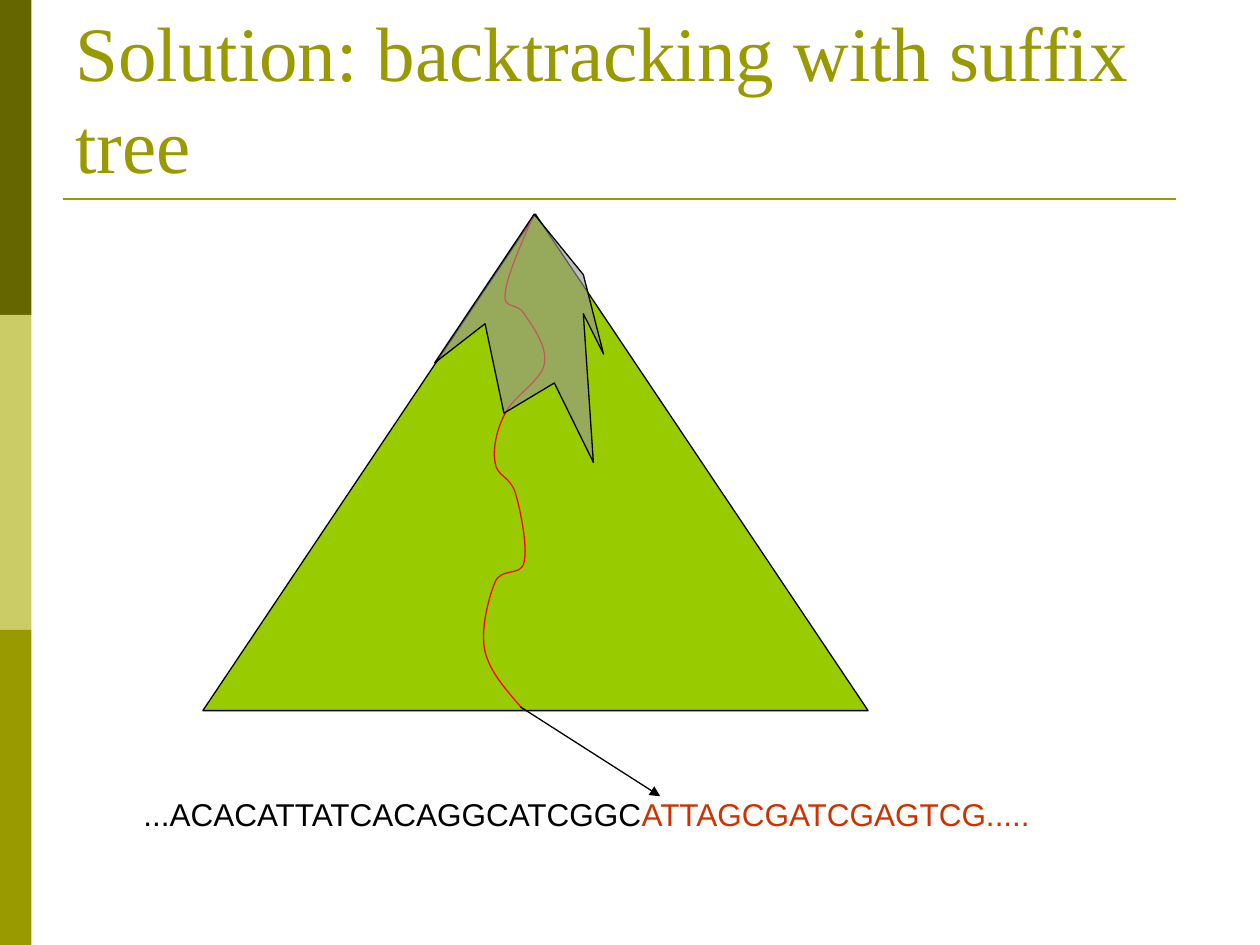
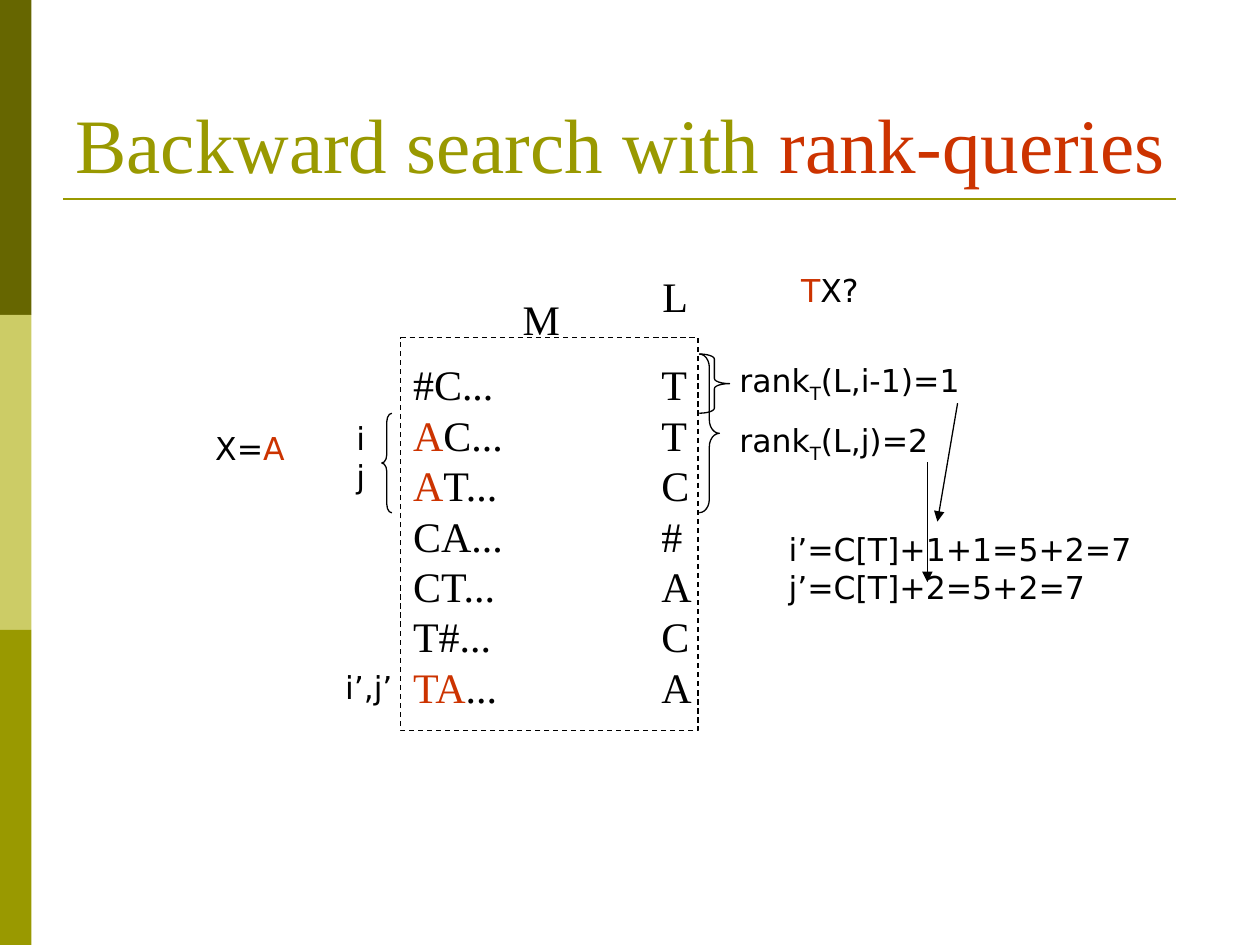
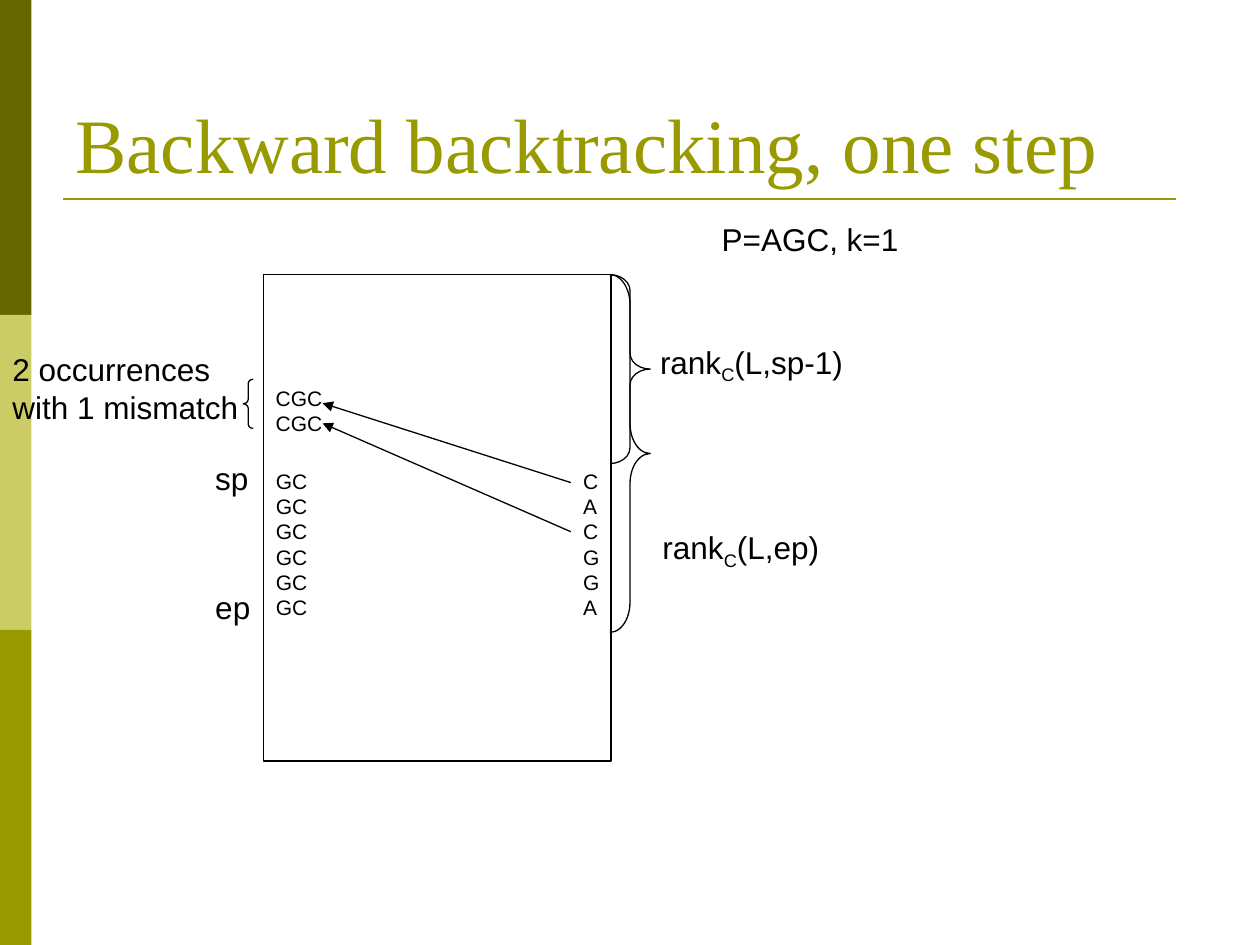
from dataclasses import dataclass

from lxml import etree
from pptx import Presentation
from pptx.dml.color import RGBColor
from pptx.enum.dml import MSO_LINE
from pptx.enum.shapes import MSO_CONNECTOR, MSO_SHAPE
from pptx.enum.text import MSO_ANCHOR, MSO_AUTO_SIZE, PP_ALIGN
from pptx.oxml.ns import qn
from pptx.util import Inches, Pt

RECTANGLE = MSO_SHAPE.RECTANGLE
TRIANGLE = MSO_SHAPE.ISOSCELES_TRIANGLE
LEFT_BRACE = MSO_SHAPE.LEFT_BRACE
RIGHT_BRACE = MSO_SHAPE.RIGHT_BRACE
STRAIGHT = MSO_CONNECTOR.STRAIGHT
DASH = MSO_LINE.DASH
BOTTOM = MSO_ANCHOR.BOTTOM
LEFT = PP_ALIGN.LEFT
NO_FIT = MSO_AUTO_SIZE.NONE
GROW = MSO_AUTO_SIZE.SHAPE_TO_FIT_TEXT
TITLE_ONLY = 5


@dataclass(frozen=True)
class Theme:
    olive: str = "999900"
    bands: tuple = ("666600", "CCCC66", "999900")
    accent: str = "CC3300"
    ink: str = "000000"
    tree: str = "99CC00"
    trail: str = "FF0000"
    cap: str = "969696"
    serif: str = "Times New Roman"
    sans: str = "Arial"
    wide: str = "DejaVu Sans"
    title_size: int = 44
    matrix_size: int = 24
    label_size: int = 18
    row_size: int = 12
    thin: float = 0.75
    rule: float = 1.5


@dataclass(frozen=True)
class Box:
    left: float
    top: float
    width: float
    height: float

    def inside(self, left, top, width, height):
        return Box(self.left + left, self.top + top, width, height)

    def point(self, across, down):
        return Inches(self.left + across), Inches(self.top + down)

    def lengths(self):
        return [Inches(value) for value in (self.left, self.top, self.width, self.height)]


THEME = Theme()


def color(code):
    return RGBColor.from_string(code)


def set_attributes(target, values):
    for name, value in values.items():
        setattr(target, name, value)


def paint(shape, fill=None, line=None):
    shape.shadow.inherit = False
    if fill:
        shape.fill.solid()
        shape.fill.fore_color.rgb = color(fill)
    else:
        shape.fill.background()
    if line:
        shape.line.color.rgb = color(line)
        shape.line.width = Pt(THEME.thin)
    else:
        shape.line.fill.background()


def add_preset(slide, kind, box, fill=None, line=None, adjustments=()):
    shape = slide.shapes.add_shape(kind, *box.lengths())
    for index, value in enumerate(adjustments):
        shape.adjustments[index] = value
    paint(shape, fill, line)
    return shape


def add_brace(slide, kind, box, curve):
    return add_preset(slide, kind, box, line=THEME.ink, adjustments=(curve, 0.5))


def add_line(slide, start, end, line=THEME.ink, width=THEME.thin, arrow=True):
    connector = slide.shapes.add_connector(STRAIGHT, *start, *end)
    connector.line.color.rgb = color(line)
    connector.line.width = Pt(width)
    if arrow:
        etree.SubElement(connector.line._get_or_add_ln(), qn("a:tailEnd"), type="triangle")
    etree.SubElement(connector.element.spPr, qn("a:effectLst"))
    return connector


def add_outline(slide, box, points, close):
    start, *rest = [box.point(*point) for point in points]
    builder = slide.shapes.build_freeform(*start, scale=1.0)
    builder.add_line_segments(rest, close=close)
    return builder.convert_to_shape()


def bend(shape):
    segments = list(shape.element.iter(qn("a:lnTo")))
    for index in range(0, len(segments), 3):
        first = segments[index]
        curve = etree.Element(qn("a:cubicBezTo"))
        first.addprevious(curve)
        for segment in segments[index:index + 3]:
            curve.append(segment[0])
            segment.getparent().remove(segment)


def write(paragraph, pieces, font, size, base=THEME.ink):
    if isinstance(pieces, str):
        pieces = [(pieces, "")]
    paragraph.alignment = LEFT
    for text, style in pieces:
        run = paragraph.add_run()
        run.text = text
        set_attributes(run.font, {"name": font, "size": Pt(size)})
        run.font.color.rgb = color(THEME.accent if style == "accent" else base)
        if style == "sub":
            run.font._element.set("baseline", "-25000")


def add_text(slide, box, lines, font, size=THEME.label_size, wrap=False):
    frame = slide.shapes.add_textbox(*box.lengths()).text_frame
    set_attributes(frame, {"word_wrap": wrap, "auto_size": GROW})
    for index, pieces in enumerate(lines):
        paragraph = frame.add_paragraph() if index else frame.paragraphs[0]
        write(paragraph, pieces, font, size)


def rank(symbol, arguments):
    return [("rank", ""), (symbol, "sub"), (arguments, "")]


def format_layout(layout):
    title = layout.placeholders[0]
    names = ("left", "top", "width", "height")
    set_attributes(title, dict(zip(names, Box(0.5, 0.3, 9, 1.25).lengths())))
    set_attributes(title.text_frame, {"vertical_anchor": BOTTOM, "auto_size": NO_FIT})


def add_master_parts(presentation, slide):
    height = 7.5 / len(THEME.bands)
    parts = [
        add_preset(slide, RECTANGLE, Box(0, index * height, 0.25, height), fill=band)
        for index, band in enumerate(THEME.bands)
    ]
    edge = Box(0.5, 1.58, 8.83, 0)
    parts.append(add_line(slide, edge.point(0, 0), edge.point(edge.width, 0),
                          THEME.olive, THEME.rule, arrow=False))
    tree = presentation.slide_master.element.cSld.spTree
    for position, part in enumerate(parts, start=2):
        tree.insert(position, part.element)


def add_slide(presentation, title):
    slide = presentation.slides.add_slide(presentation.slide_layouts[TITLE_ONLY])
    write(slide.shapes.title.text_frame.paragraphs[0], title,
          THEME.serif, THEME.title_size, THEME.olive)
    return slide


def draw_suffix_tree(slide, box):
    add_preset(slide, TRIANGLE, box, fill=THEME.tree, line=THEME.ink)
    trail = add_outline(slide, box, [
        (2.63, 0), (2.52, 0.25), (2.41, 0.5), (2.4, 0.63),
        (2.38, 0.76), (2.5, 0.7), (2.55, 0.79),
        (2.61, 0.88), (2.74, 1.05), (2.71, 1.19),
        (2.69, 1.32), (2.46, 1.45), (2.4, 1.58),
        (2.33, 1.71), (2.3, 1.87), (2.32, 1.97),
        (2.33, 2.08), (2.44, 2.08), (2.48, 2.21),
        (2.52, 2.34), (2.58, 2.64), (2.55, 2.76),
        (2.53, 2.88), (2.37, 2.8), (2.32, 2.92),
        (2.27, 3.04), (2.2, 3.3), (2.24, 3.47),
        (2.28, 3.64), (2.42, 3.79), (2.55, 3.94),
    ], close=False)
    bend(trail)
    paint(trail, line=THEME.trail)
    add_line(slide, box.point(2.52, 3.91), box.point(3.63, 4.62))
    cap = add_outline(slide, box, [
        (2.63, 0), (1.84, 1.18), (2.24, 0.87), (2.39, 1.58), (2.79, 1.34),
        (3.1, 1.97), (3.02, 0.79), (3.18, 1.11), (3.02, 0.48),
    ], close=True)
    paint(cap, THEME.cap, THEME.ink)
    fill_color = cap.element.spPr.find(qn("a:solidFill"))[0]
    etree.SubElement(fill_color, qn("a:alpha"), val="62000")


def draw_sequence(slide, box):
    add_text(slide, box, [[("...ACACATTATCACAGGCATCGGC", ""),
                           ("ATTAGCGATCGAGTCG.....", "accent")]], THEME.sans)


def draw_matrix(slide, box):
    rows = ["#C...", [("A", "accent"), ("C...", "")], [("A", "accent"), ("T...", "")],
            "CA...", "CT...", "T#...", [("TA", "accent"), ("...", "")]]
    for area, lines, wrap in [
        ((0, 0.12, 1, 2.9), rows, False),
        ((1.97, 0.12, 0.39, 2.9), "TTC#ACA", True),
        ((0.87, -0.4, 0.5, 0.5), ["M"], False),
        ((1.98, -0.58, 0.4, 0.5), ["L"], False),
    ]:
        add_text(slide, box.inside(*area), lines, THEME.serif, THEME.matrix_size, wrap)
    frame = add_preset(slide, RECTANGLE, box, line=THEME.ink)
    frame.line.dash_style = DASH


def draw_interval(slide, box):
    add_brace(slide, LEFT_BRACE, box.inside(1.42, 0, 0.08, 0.79), 0.839)
    for area, lines in [
        ((1.12, 0, 0.29, 0.7), ["i", "j"]),
        ((1.03, 1.97, 0.58, 0.4), ["i’,j’"]),
        ((0, 0.08, 0.75, 0.4), [[("X=", ""), ("A", "accent")]]),
    ]:
        add_text(slide, box.inside(*area), lines, THEME.wide)


def draw_rank_queries(slide, box):
    add_brace(slide, RIGHT_BRACE, box.inside(0, 0.71, 0.24, 0.47), 0.167)
    add_brace(slide, RIGHT_BRACE, box.inside(0, 0.71, 0.16, 1.26), 0.671)
    for area, lines in [
        ((0.71, 0, 0.66, 0.4), [[("T", "accent"), ("X?", "")]]),
        ((0.22, 0.72, 2.03, 0.4), [rank("T", "(L,i-1)=1")]),
        ((0.22, 1.19, 1.77, 0.4), [rank("T", "(L,j)=2")]),
        ((0.61, 2.06, 2.92, 0.7), ["i’=C[T]+1+1=5+2=7", "j’=C[T]+2=5+2=7"]),
    ]:
        add_text(slide, box.inside(*area), lines, THEME.wide)
    add_line(slide, box.point(2.05, 1.1), box.point(1.89, 2.04))
    add_line(slide, box.point(1.81, 1.57), box.point(1.81, 2.52))


def draw_step_matrix(slide, box):
    add_preset(slide, RECTANGLE, box, line=THEME.ink)
    for area, lines, wrap in [
        ((2.44, 1.49, 0.33, 1.3), "CACGGA", False),
        ((0, 1.49, 0.55, 1.3), ["GC"] * 6, True),
        ((0, 0.83, 0.87, 0.5), ["CGC"] * 2, True),
    ]:
        add_text(slide, box.inside(*area), lines, THEME.sans, THEME.row_size, wrap)
    for start, end in [(1.65, 1.02), (2.04, 1.18)]:
        add_line(slide, box.point(2.44, start), box.point(0.47, end))


def draw_step_matches(slide, box):
    add_brace(slide, LEFT_BRACE, box.inside(1.93, 0.28, 0.08, 0.39), 0.42)
    for area, lines in [
        ((0, 0, 1.99, 0.7), ["2 occurrences", "with 1 mismatch"]),
        ((1.61, 0.86, 0.47, 0.4), ["sp"]),
        ((1.61, 1.89, 0.48, 0.4), ["ep"]),
    ]:
        add_text(slide, box.inside(*area), lines, THEME.sans)


def draw_step_ranks(slide, box):
    for height, curve in [(1.5, 0.395), (2.84, 0.748)]:
        add_brace(slide, RIGHT_BRACE, box.inside(0, 0.48, 0.32, height), curve)
    for area, line in [
        ((0.79, 0, 1.6, 0.4), "P=AGC, k=1"),
        ((0.3, 0.97, 1.67, 0.4), rank("C", "(L,sp-1)")),
        ((0.32, 2.44, 1.46, 0.4), rank("C", "(L,ep)")),
    ]:
        add_text(slide, box.inside(*area), [line], THEME.sans)


def main():
    presentation = Presentation()
    set_attributes(presentation, {"slide_width": Inches(10), "slide_height": Inches(7.5)})
    format_layout(presentation.slide_layouts[TITLE_ONLY])

    slide = add_slide(presentation, "Solution: backtracking with suffix tree")
    add_master_parts(presentation, slide)
    draw_suffix_tree(slide, Box(1.61, 1.7, 5.28, 3.94))
    draw_sequence(slide, Box(1.04, 6.26, 7.37, 0.4))

    slide = add_slide(presentation, [("Backward search with ", ""), ("rank-queries", "accent")])
    draw_matrix(slide, Box(3.18, 2.68, 2.36, 3.12))
    draw_interval(slide, Box(1.61, 3.28, 1.61, 2.37))
    draw_rank_queries(slide, Box(5.55, 2.1, 3.53, 2.76))

    slide = add_slide(presentation, "Backward backtracking, one step")
    draw_step_matrix(slide, Box(2.09, 2.18, 2.76, 3.86))
    draw_step_matches(slide, Box(0, 2.73, 2.09, 2.29))
    draw_step_ranks(slide, Box(4.84, 1.7, 2.39, 3.32))

    presentation.save("out.pptx")


if __name__ == "__main__":
    main()
